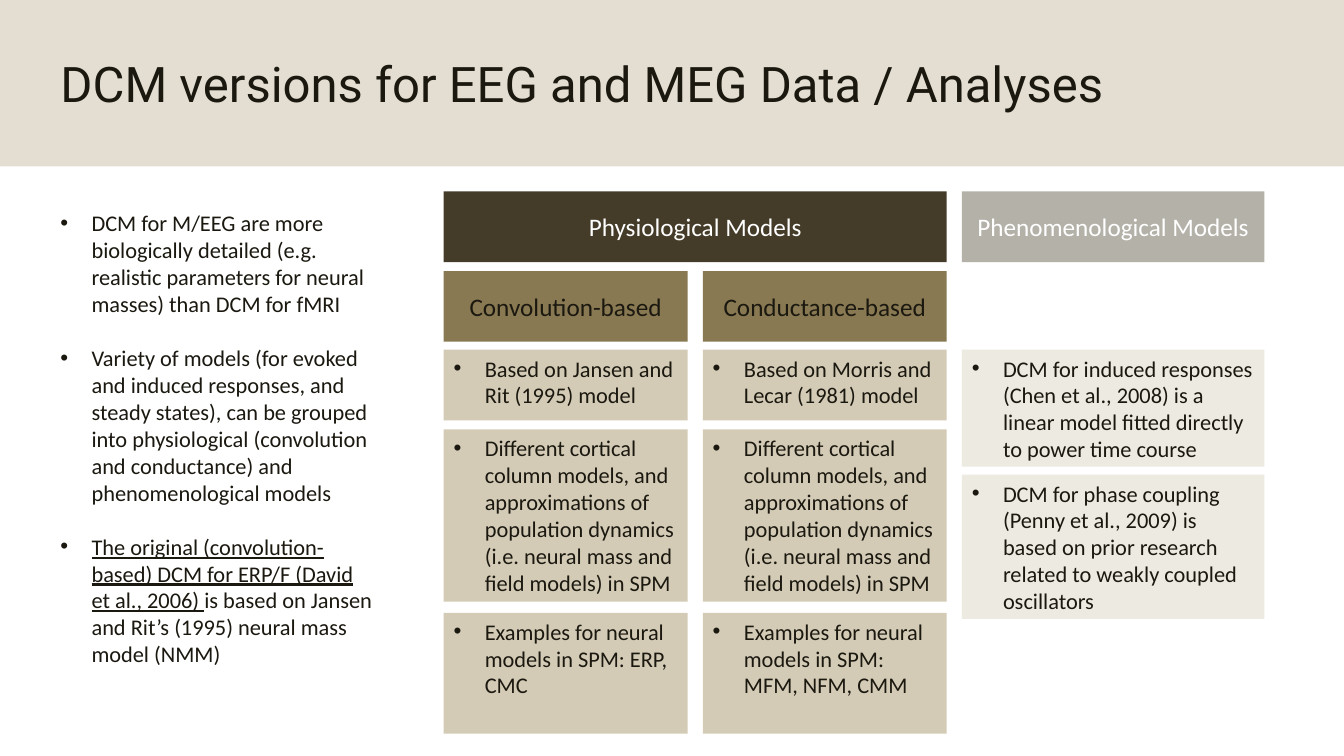
from dataclasses import dataclass

from lxml import etree
from pptx import Presentation, util as u
from pptx.dml.color import RGBColor
from pptx.enum import shapes, text
from pptx.oxml.ns import qn

PX = 9144  # EMU per px, 100 px to the inch


@dataclass(frozen=True)
class Theme:
    ink: str = "1B1810"
    white: str = "FFFFFF"
    band: str = "E3DED1"
    dark: str = "443C29"
    mid: str = "887952"
    pale: str = "D3CBB6"
    faded: int = 40  # percent opacity of the phenomenological column
    title_font: str = "Roboto"
    body_font: str = "Calibri"
    title_size: int = 35
    head_size: int = 18
    body_size: int = 16


def apply(target, values):
    for name, value in values.items():
        setattr(target, name, value)


class Deck:
    def __init__(self, theme, width, height):
        self.theme = theme
        self.prs = Presentation()
        apply(self.prs, {"slide_width": width * PX, "slide_height": height * PX})
        self.slide = self.prs.slides.add_slide(self.prs.slide_layouts[5])

    def fill(self, shape, color, opacity=100):
        shape.fill.solid()
        shape.fill.fore_color.rgb = RGBColor.from_string(color)
        if opacity < 100:
            rgb = shape.fill._xPr.find(".//" + qn("a:srgbClr"))
            etree.SubElement(rgb, qn("a:alpha")).set("val", str(opacity * 1000))

    def frame(self, shape, anchor):
        apply(shape.text_frame, {"word_wrap": True, "vertical_anchor": anchor,
                                 "auto_size": text.MSO_AUTO_SIZE.NONE})
        return shape.text_frame

    def run(self, paragraph, words, size, color, font=None, underline=None):
        run = paragraph.add_run()
        run.text = words
        apply(run.font, {"size": u.Pt(size), "name": font or self.theme.body_font,
                         "underline": underline})
        run.font.color.rgb = RGBColor.from_string(color)

    def bullet(self, paragraph, margin):
        props = paragraph._p.get_or_add_pPr()
        props.set("marL", str(margin * PX))
        props.set("indent", str(-31 * PX))
        etree.SubElement(props, qn("a:buFont")).set("typeface", "Arial")
        etree.SubElement(props, qn("a:buChar")).set("char", "•")

    def title(self, words, width, height):
        t, band = self.theme, self.slide.shapes.title
        apply(band, {"left": 0, "top": 0, "width": width * PX, "height": height * PX})
        self.fill(band, t.band)
        heading = self.frame(band, text.MSO_ANCHOR.MIDDLE)
        heading.margin_left = 60 * PX
        heading.paragraphs[0].alignment = text.PP_ALIGN.LEFT
        self.run(heading.paragraphs[0], words, t.title_size, t.ink, t.title_font)

    def box(self, place, color, opacity, anchor):
        rect = self.slide.shapes.add_shape(
            shapes.MSO_SHAPE.RECTANGLE, *(n * PX for n in place))
        rect.shadow.inherit = False
        rect.line.fill.background()
        self.fill(rect, color, opacity)
        return self.frame(rect, anchor).paragraphs[0]

    def header(self, words, place, color, ink, opacity=100):
        label = self.box(place, color, opacity, text.MSO_ANCHOR.MIDDLE)
        label.alignment = text.PP_ALIGN.CENTER
        self.run(label, words, self.theme.head_size, ink)

    def card(self, words, place, opacity=100):
        t = self.theme
        point = self.box(place, t.pale, opacity, text.MSO_ANCHOR.TOP)
        point.alignment = text.PP_ALIGN.LEFT
        self.bullet(point, 31)
        self.run(point, words, t.body_size, t.ink)

    def summary(self, points, place):
        t = self.theme
        box = self.slide.shapes.add_textbox(*(n * PX for n in place))
        frame = self.frame(box, text.MSO_ANCHOR.TOP)
        for i, parts in enumerate(points):
            point = frame.add_paragraph() if i else frame.paragraphs[0]
            if i:
                point.space_before = u.Pt(19.5)
            self.bullet(point, 81)
            for words, underline in parts:
                self.run(point, words, t.body_size, t.ink, underline=underline)


SUMMARY = [
    [("DCM for M/EEG are more biologically detailed (e.g. realistic parameters "
      "for neural masses) than DCM for fMRI", False)],
    [("Variety of models (for evoked and induced responses, and steady states), "
      "can be grouped into physiological (convolution and conductance) and "
      "phenomenological models", False)],
    [("The original (convolution-based) DCM for ERP/F (David et al., 2006) ", True),
     ("is based on Jansen and Rit’s (1995) neural mass model (NMM)", False)],
]
CORTICAL = ("Different cortical column models, and approximations of population "
            "dynamics (i.e. neural mass and field models) in SPM")
PHYSIOLOGICAL = {
    "Convolution-based": ["Based on Jansen and Rit (1995) model", CORTICAL,
                          "Examples for neural models in SPM: ERP, CMC"],
    "Conductance-based": ["Based on Morris and Lecar (1981) model", CORTICAL,
                          "Examples for neural models in SPM: MFM, NFM, CMM"],
}
PHENOMENOLOGICAL = [
    "DCM for induced responses (Chen et al., 2008) is a linear model fitted "
    "directly to power time course",
    "DCM for phase coupling (Penny et al., 2009) is based on prior research "
    "related to weakly coupled oscillators",
]

# Grid: columns share one gutter, rows are (top, height)
LEFT, COLUMN, GUTTER, PHENO_WIDTH = 440, 242, 15, 300
PHYSIO_WIDTH = 2 * COLUMN + GUTTER
PHENO_LEFT = LEFT + PHYSIO_WIDTH + GUTTER
FAMILY_ROW, TYPE_ROW = (190, 70), (269, 70)
PHYSIO_ROWS = [(347, 70), (426, 171), (608, 120)]
PHENO_ROWS = [(347, 116), (471, 143)]


def main():
    theme = Theme()
    deck = Deck(theme, 1333, 750)
    deck.title("DCM versions for EEG and MEG Data / Analyses", 1333, 165)
    deck.summary(SUMMARY, (0, 203, 379, 481))

    # Model families
    for family, left, width, opacity in [
            ("Physiological Models", LEFT, PHYSIO_WIDTH, 100),
            ("Phenomenological Models", PHENO_LEFT, PHENO_WIDTH, theme.faded)]:
        top, height = FAMILY_ROW
        deck.header(family, (left, top, width, height), theme.dark, theme.white, opacity)

    # Physiological columns
    for i, (kind, facts) in enumerate(PHYSIOLOGICAL.items()):
        left = LEFT + i * (COLUMN + GUTTER)
        top, height = TYPE_ROW
        deck.header(kind, (left, top, COLUMN, height), theme.mid, theme.ink)
        for fact, (top, height) in zip(facts, PHYSIO_ROWS):
            deck.card(fact, (left, top, COLUMN, height))

    # Phenomenological column
    for fact, (top, height) in zip(PHENOMENOLOGICAL, PHENO_ROWS):
        deck.card(fact, (PHENO_LEFT, top, PHENO_WIDTH, height), theme.faded)

    deck.prs.save("out.pptx")


if __name__ == "__main__":
    main()
